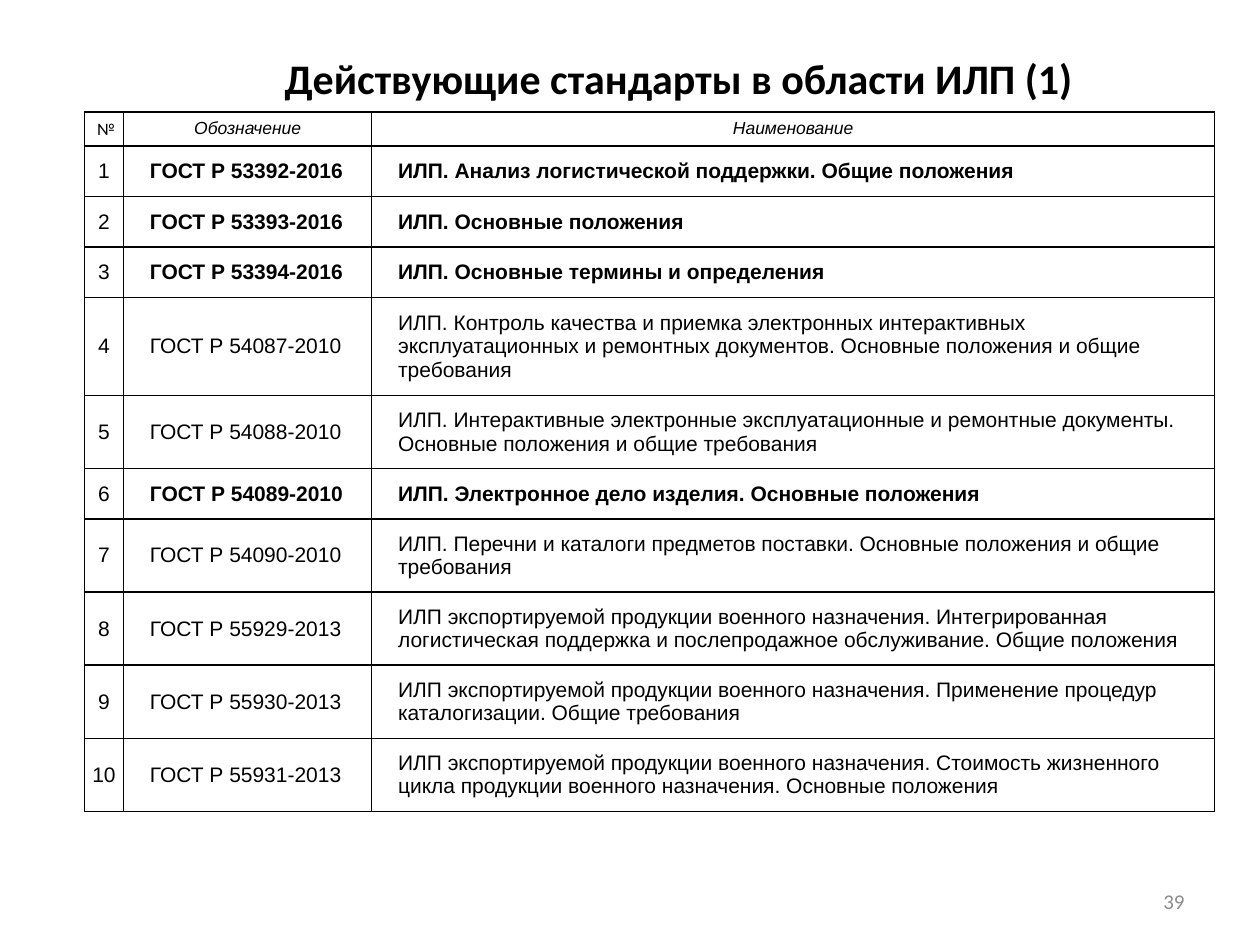
from lxml.etree import SubElement
from pptx import Presentation
from pptx.dml.color import RGBColor
from pptx.enum.text import MSO_ANCHOR, MSO_AUTO_SIZE, PP_ALIGN
from pptx.oxml.ns import qn
from pptx.util import Inches, Pt

TITLE = "Действующие стандарты в области ИЛП (1)"
PAGE = "39"
HEADS = ["№", "Обозначение", "Наименование"]
# code, name, bold, lines of text
ROWS = [
    ("ГОСТ Р 53392-2016", "ИЛП. Анализ логистической поддержки. Общие положения", True, 1),
    ("ГОСТ Р 53393-2016", "ИЛП. Основные положения", True, 1),
    ("ГОСТ Р 53394-2016", "ИЛП. Основные термины и определения", True, 1),
    ("ГОСТ Р 54087-2010", "ИЛП. Контроль качества и приемка электронных интерактивных "
     "эксплуатационных и ремонтных документов. Основные положения и общие требования", False, 3),
    ("ГОСТ Р 54088-2010", "ИЛП. Интерактивные электронные эксплуатационные и ремонтные "
     "документы. Основные положения и общие требования", False, 2),
    ("ГОСТ Р 54089-2010", "ИЛП. Электронное дело изделия. Основные положения", True, 1),
    ("ГОСТ Р 54090-2010", "ИЛП. Перечни и каталоги предметов поставки. "
     "Основные положения и общие требования", False, 2),
    ("ГОСТ Р 55929-2013", "ИЛП экспортируемой продукции военного назначения. Интегрированная "
     "логистическая поддержка и послепродажное обслуживание. Общие положения", False, 2),
    ("ГОСТ Р 55930-2013", "ИЛП экспортируемой продукции военного назначения. "
     "Применение процедур каталогизации. Общие требования", False, 2),
    ("ГОСТ Р 55931-2013", "ИЛП экспортируемой продукции военного назначения. Стоимость "
     "жизненного цикла продукции военного назначения. Основные положения", False, 2),
]
WIDTHS = [0.31, 1.97, 6.69]
HEIGHTS = {"head": 0.27, 1: 0.4, 2: 0.56, 3: 0.75}  # by lines of text
TIGHT, WIDE = (0.01, 0.01), (0.21, 0.09)  # side and top margins

INK, GREY = RGBColor(0, 0, 0), RGBColor(0x8C, 0x8C, 0x8C)
THEME = {
    "title": {"name": "Calibri", "size": Pt(24), "bold": True, "color": INK},
    "page": {"name": "Calibri", "size": Pt(12), "color": GREY},
    "mark": {"name": "Calibri", "size": Pt(10), "bold": False, "color": INK},
    "head": {"name": "Arial", "size": Pt(10), "bold": False, "italic": True, "color": INK},
    "cell": {"name": "Arial", "size": Pt(12), "bold": False, "color": INK},
}


def write(frame, text, style, align, **extra):
    par = frame.paragraphs[0]
    par.alignment = align
    run = par.add_run()
    run.text = text
    for key, val in {**THEME[style], **extra}.items():
        if key == "color":
            run.font.color.rgb = val
        else:
            setattr(run.font, key, val)


def place(shape, *box):
    for key, val in zip(("left", "top", "width", "height"), box):
        setattr(shape, key, Inches(val))


def frame_cell(cell):
    """Draw a thin line on all four sides and leave the cell unfilled."""
    props = cell._tc.get_or_add_tcPr()
    for side in ("lnL", "lnR", "lnT", "lnB"):
        line = SubElement(props, qn("a:" + side), w=str(Pt(1)))
        fill = SubElement(line, qn("a:solidFill"))
        SubElement(fill, qn("a:srgbClr"), val=str(INK))
    cell.fill.background()


def fill_cell(cell, text, style, align, pad=None, **extra):
    frame_cell(cell)
    if pad:
        side, top = map(Inches, pad)
        cell.margin_left = cell.margin_right = side
        cell.margin_top = cell.margin_bottom = top
        cell.vertical_anchor = MSO_ANCHOR.MIDDLE
    write(cell.text_frame, text, style, align, **extra)


def add_grid(slide):
    highs = [HEIGHTS["head"]] + [HEIGHTS[row[-1]] for row in ROWS]
    grid = slide.shapes.add_table(
        len(highs), len(WIDTHS), Inches(0.67), Inches(0.89),
        Inches(sum(WIDTHS)), Inches(sum(highs))).table
    grid.first_row = grid.horz_banding = False
    for col, wide in zip(grid.columns, WIDTHS):
        col.width = Inches(wide)
    for row, high in zip(grid.rows, highs):
        row.height = Inches(high)
    for col, text in enumerate(HEADS):
        fill_cell(grid.cell(0, col), text, "head" if col else "mark", PP_ALIGN.CENTER)
    for num, (code, name, bold, _) in enumerate(ROWS, 1):
        fill_cell(grid.cell(num, 0), str(num), "cell", PP_ALIGN.CENTER, TIGHT)
        for col, text in enumerate((code, name), 1):
            fill_cell(grid.cell(num, col), text, "cell", PP_ALIGN.LEFT, WIDE, bold=bold)


def main():
    deck = Presentation()
    deck.slide_width, deck.slide_height = Inches(10), Inches(7.5)
    slide = deck.slides.add_slide(deck.slide_layouts[5])

    title = slide.shapes.title
    place(title, 2.16, 0.37, 6.54, 0.5)
    title.text_frame.vertical_anchor = MSO_ANCHOR.TOP
    title.text_frame.auto_size = MSO_AUTO_SIZE.SHAPE_TO_FIT_TEXT
    write(title.text_frame, TITLE, "title", PP_ALIGN.JUSTIFY)

    add_grid(slide)

    page = slide.shapes.add_textbox(0, 0, 0, 0)
    place(page, 7.17, 6.95, 2.33, 0.4)
    page.text_frame.word_wrap = True
    page.text_frame.vertical_anchor = MSO_ANCHOR.MIDDLE
    write(page.text_frame, PAGE, "page", PP_ALIGN.RIGHT)

    deck.save("out.pptx")


if __name__ == "__main__":
    main()
